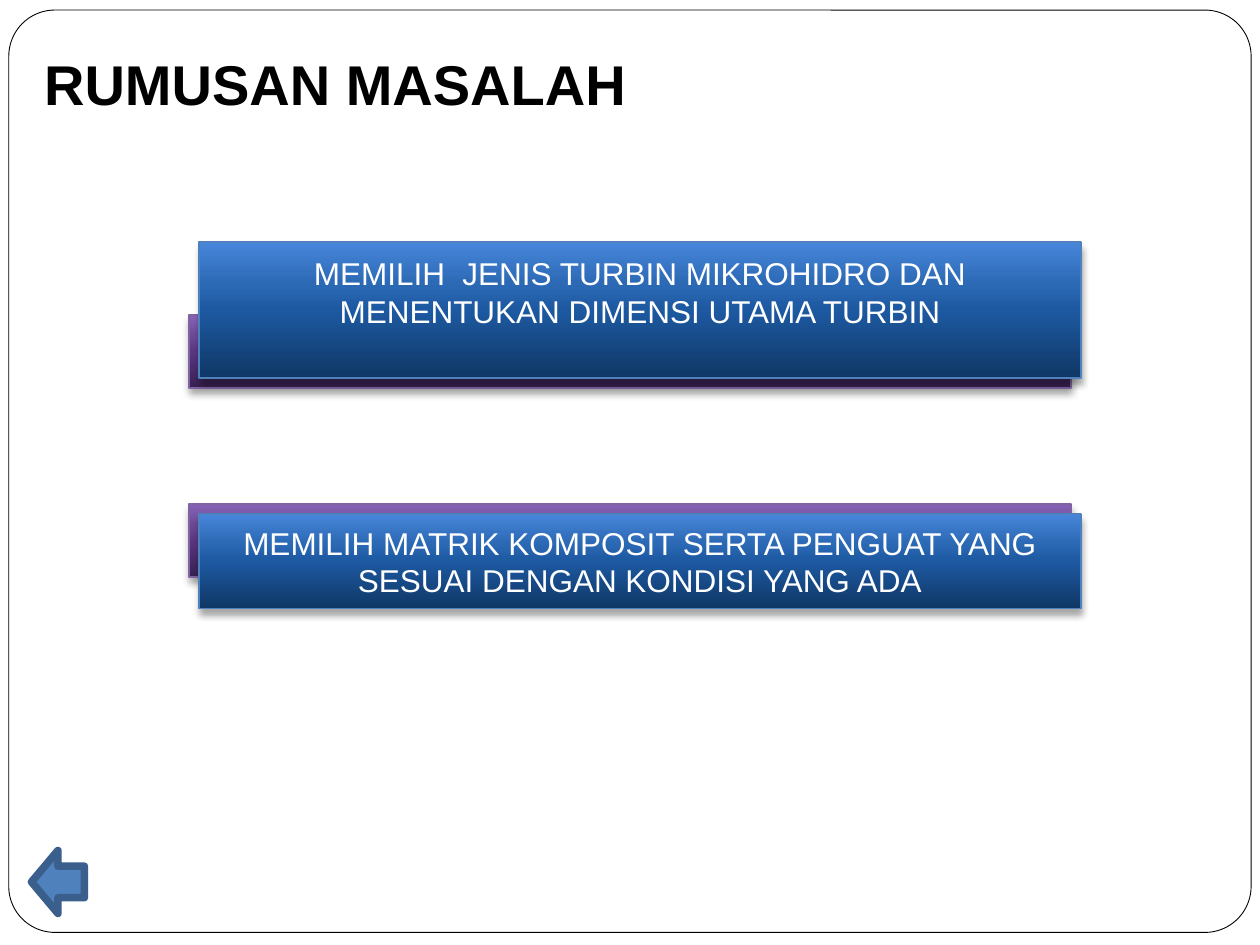
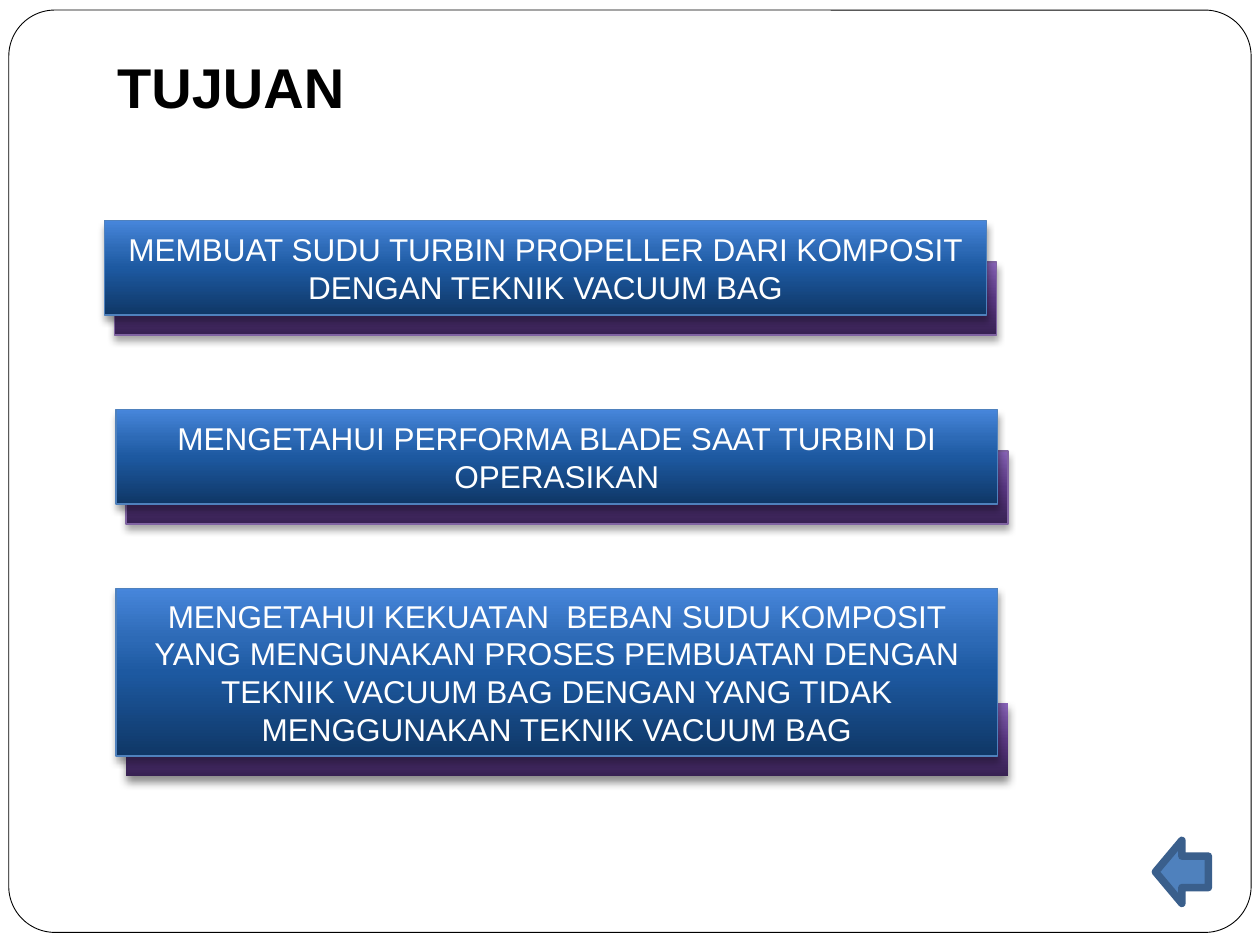
from dataclasses import dataclass

from lxml import etree
from pptx import Presentation
from pptx import util as u
from pptx.dml.color import RGBColor
from pptx.enum import shapes, text
from pptx.oxml.ns import qn

TITLE_ONLY = 5
CARD_WIDTH = 7
BACKING_HEIGHT = 0.58
BACKING_SHIFT = 0.08


@dataclass(frozen=True)
class Theme:
    font: str = "Arial"
    title_size: int = 32
    card_size: int = 18
    black: str = "000000"
    white: str = "FFFFFF"
    card_line: str = "4F81BD"
    backing_line: str = "8064A2"
    arrow_fill: str = "4F81BD"
    arrow_line: str = "3A5F8C"
    # Gradient stops run from the bottom of a shape to its top.
    card_stops: tuple = ((0, "0F3766"), (50, "1D59A1"), (70, "2D6AB6"), (100, "4786DB"))
    backing_stops: tuple = ((0, "372152"), (50, "593782"), (70, "6A4895"), (100, "8763B7"))


class Deck:
    def __init__(self, theme):
        self.theme = theme
        self.presentation = Presentation()
        self.presentation.slide_width = u.Inches(10)
        self.presentation.slide_height = u.Inches(7.5)
        self.layout = self.presentation.slide_layouts[TITLE_ONLY]
        self.slide = None

    def add_slide(self, title, left, width, height):
        first = self.slide is None
        self.slide = self.presentation.slides.add_slide(self.layout)
        if first:
            self.add_frame_to_layout()
        placeholder = self.slide.shapes.title
        placeholder.left, placeholder.top = u.Inches(left), u.Inches(0.25)
        placeholder.width, placeholder.height = u.Inches(width), u.Inches(height)
        frame = placeholder.text_frame
        frame.auto_size = text.MSO_AUTO_SIZE.NONE
        frame.vertical_anchor = text.MSO_ANCHOR.BOTTOM
        frame.margin_bottom = u.Inches(0.1)
        self.set_text(frame, title, self.theme.title_size, self.theme.black,
                      text.PP_ALIGN.LEFT, bold=True)

    def set_text(self, frame, words, size, color, alignment, bold=False):
        frame.text = words
        paragraph = frame.paragraphs[0]
        paragraph.alignment = alignment
        paragraph.font.name = self.theme.font
        paragraph.font.size = u.Pt(size)
        paragraph.font.bold = bold
        paragraph.font.color.rgb = RGBColor.from_string(color)

    def add_shape(self, kind, left, top, width, height, fill=None, line=None, line_width=0.75):
        shape = self.slide.shapes.add_shape(
            kind, u.Inches(left), u.Inches(top), u.Inches(width), u.Inches(height))
        shape.shadow.inherit = False
        if fill:
            shape.fill.solid()
            shape.fill.fore_color.rgb = RGBColor.from_string(fill)
        if line:
            shape.line.color.rgb = RGBColor.from_string(line)
            shape.line.width = u.Pt(line_width)
        else:
            shape.line.fill.background()
        return shape

    def add_frame_to_layout(self):
        """Move one rounded border into the layout, so that every slide shows it."""
        border = self.add_shape(shapes.MSO_SHAPE.ROUNDED_RECTANGLE, 0.07, 0.08, 9.86, 7.32,
                                self.theme.white, self.theme.black, 0.5)
        border.adjustments[0] = 0.05
        self.layout.shapes.element.insert(2, border.element)

    def add_panel(self, left, top, height, stops, line, shadow=(35, 4)):
        """Add a gradient bar; shadow is its opacity in percent and blur in points."""
        panel = self.add_shape(shapes.MSO_SHAPE.RECTANGLE, left, top, CARD_WIDTH, height, line=line)
        panel.fill.gradient()
        panel.fill.gradient_angle = 90
        properties = panel.element.spPr
        stop_list = properties.find(qn("a:gradFill")).find(qn("a:gsLst"))
        for old_stop in list(stop_list):
            stop_list.remove(old_stop)
        for position, color in stops:
            stop = etree.SubElement(stop_list, qn("a:gs"), pos=str(position * 1000))
            etree.SubElement(stop, qn("a:srgbClr"), val=color)

        opacity, blur = shadow
        outer = etree.SubElement(
            properties.find(qn("a:effectLst")), qn("a:outerShdw"), blurRad=str(u.Pt(blur)),
            dist=str(u.Pt(3)), dir="5400000", rotWithShape="0")
        color = etree.SubElement(outer, qn("a:srgbClr"), val=self.theme.black)
        etree.SubElement(color, qn("a:alpha"), val=str(opacity * 1000))
        return panel

    def add_card(self, words, left, top, height, shift, drop, bottom_margin=0.05, soft=False):
        """Add a blue card on a purple backing.

        shift moves the backing sideways; drop is how far it ends below the card.
        A soft backing has no outline and a wider shadow.
        """
        theme = self.theme
        self.add_panel(left + shift, top + height + drop - BACKING_HEIGHT, BACKING_HEIGHT,
                       theme.backing_stops, None if soft else theme.backing_line,
                       (45, 5) if soft else (35, 4))
        card = self.add_panel(left, top, height, theme.card_stops, theme.card_line)
        frame = card.text_frame
        frame.word_wrap = True
        frame.vertical_anchor = text.MSO_ANCHOR.MIDDLE
        frame.margin_bottom = u.Inches(bottom_margin)
        self.set_text(frame, words, theme.card_size, theme.white, text.PP_ALIGN.CENTER)

    def add_back_arrow(self, left, top):
        self.add_shape(shapes.MSO_SHAPE.LEFT_ARROW, left, top, 0.42, 0.5,
                       self.theme.arrow_fill, self.theme.arrow_line, 4.33)


def main():
    deck = Deck(Theme())

    deck.add_slide("RUMUSAN MASALAH", 0.25, 6, 0.78)
    deck.add_card("MEMILIH  JENIS TURBIN MIKROHIDRO DAN MENENTUKAN DIMENSI UTAMA TURBIN",
                  1.58, 1.92, 1.08, -BACKING_SHIFT, 0.08, bottom_margin=0.34)
    deck.add_card("MEMILIH MATRIK KOMPOSIT SERTA PENGUAT YANG SESUAI DENGAN KONDISI YANG ADA",
                  1.58, 4.08, 0.75, -BACKING_SHIFT, -0.25)
    deck.add_back_arrow(0.25, 6.75)

    deck.add_slide("TUJUAN", 0.83, 2.08, 0.8)
    goals = (
        ("MEMBUAT SUDU TURBIN PROPELLER DARI KOMPOSIT DENGAN TEKNIK VACUUM BAG",
         0.83, 1.75, 0.75, False),
        ("MENGETAHUI PERFORMA BLADE SAAT TURBIN DI OPERASIKAN", 0.92, 3.25, 0.75, False),
        ("MENGETAHUI KEKUATAN  BEBAN SUDU KOMPOSIT YANG MENGUNAKAN PROSES PEMBUATAN "
         "DENGAN TEKNIK VACUUM BAG DENGAN YANG TIDAK MENGGUNAKAN TEKNIK VACUUM BAG",
         0.92, 4.67, 1.33, True),
    )
    for words, left, top, height, soft in goals:
        deck.add_card(words, left, top, height, BACKING_SHIFT, 0.16, soft=soft)
    deck.add_back_arrow(9.17, 6.67)

    deck.presentation.save("out.pptx")


if __name__ == "__main__":
    main()
